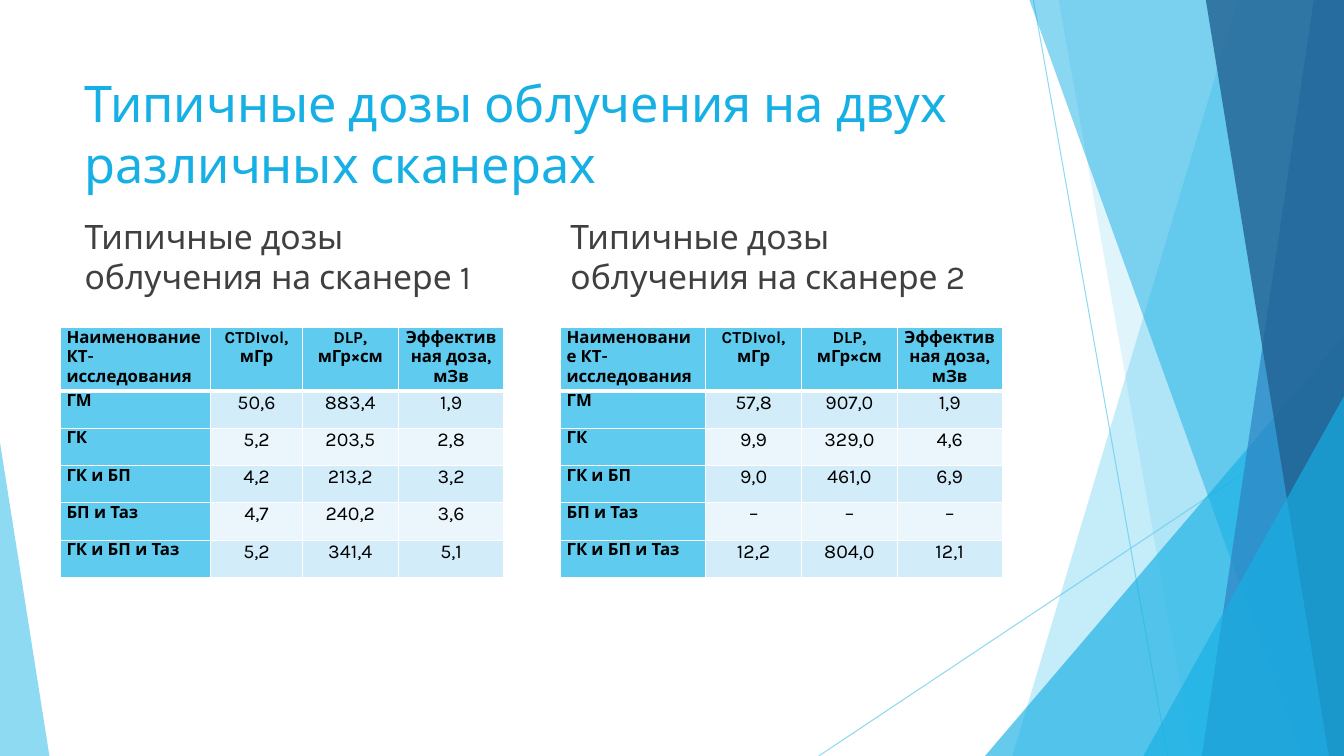
from lxml.etree import SubElement
from pptx import Presentation
from pptx.dml.color import RGBColor
from pptx.enum.shapes import MSO_CONNECTOR, MSO_SHAPE
from pptx.enum.text import MSO_ANCHOR, PP_ALIGN
from pptx.oxml import parse_xml
from pptx.oxml.ns import nsdecls, qn
from pptx.util import Inches, Pt

# Content
TITLE = "Типичные дозы облучения на двух различных сканерах"
HEADER = ["Наименование КТ-исследования", "CTDIvol, мГр", "DLP, мГр×см",
          "Эффективная доза, мЗв"]
STUDIES = ["ГМ", "ГК", "ГК и БП", "БП и Таз", "ГК и БП и Таз"]
SCANNERS = [
    {"heading": "Типичные дозы облучения на сканере 1",
     "heading_left": 0.74, "left": 0.6, "cols": [1.49, 0.91, 0.95, 1.05],
     "doses": [("50,6", "883,4", "1,9"), ("5,2", "203,5", "2,8"),
               ("4,2", "213,2", "3,2"), ("4,7", "240,2", "3,6"),
               ("5,2", "341,4", "5,1")]},
    {"heading": "Типичные дозы облучения на сканере 2",
     "heading_left": 5.56, "left": 5.56, "cols": [1.44, 0.95, 0.95, 1.04],
     "doses": [("57,8", "907,0", "1,9"), ("9,9", "329,0", "4,6"),
               ("9,0", "461,0", "6,9"), ("–", "–", "–"),
               ("12,2", "804,0", "12,1")]},
]

# Style
FONT = "Karla"
SKY = RGBColor(0x5F, 0xCB, 0xEF)
AZURE = RGBColor(0x17, 0xB0, 0xE4)
BLUE = RGBColor(0x2E, 0x83, 0xC3)
NAVY = RGBColor(0x22, 0x62, 0x92)
GRAY = RGBColor(0x40, 0x40, 0x40)
BLACK = RGBColor(0, 0, 0)
BANDS = [RGBColor(0xEA, 0xF6, 0xFC), RGBColor(0xD2, 0xEC, 0xF9)]
W, H = 13.33, 7.5
TABLE_TOP, HEADER_H, ROW_H = 3.25, 0.63, 0.37

# Decoration, back to front: a panel runs from its slanted left side
# (top x, bottom x) to the right edge; a wedge is a right triangle on the
# bottom edge (left, top, width, apex position).
LINES = [((10.25, 0), (11.58, H)), ((W, 4.03), (8.12, H))]
FACETS = [
    ("panel", (12.28, 10.04), SKY, 36),
    ("panel", (10.5, 11.83), SKY, 20),
    ("wedge", (9.77, 3.33, 3.56, 1), AZURE, 66),
    ("panel", (10.21, 12.91), AZURE, 50),
    ("panel", (13.03, 11.92), BLUE, 70),
    ("panel", (11.96, 13.18), NAVY, 80),
    ("wedge", (11.34, 3.93, 1.99, 1), AZURE, 66),
    ("wedge", (0, 4.39, 0.49, 0), SKY, 70),
]


def set_alpha(element, percent):
    color = next(element.iter(qn("a:srgbClr")))
    SubElement(color, qn("a:alpha"), val=str(percent * 1000))


def add_line(shapes, start, end):
    sp = shapes.add_connector(MSO_CONNECTOR.STRAIGHT,
                              *map(Inches, start + end))
    sp.line.color.rgb = SKY
    sp.line.width = Pt(0.75)
    props = sp._element.spPr
    set_alpha(props, 70)
    SubElement(props, qn("a:effectLst"))


def add_facet(shapes, kind, geometry, color, opacity):
    if kind == "panel":
        top_x, bottom_x = geometry
        corners = [(W, 0), (W, H), (bottom_x, H)]
        builder = shapes.build_freeform(Inches(top_x), 0)
        builder.add_line_segments([(Inches(x), Inches(y)) for x, y in corners])
        sp = builder.convert_to_shape()
    else:
        left, top, width, apex = geometry
        sp = shapes.add_shape(MSO_SHAPE.ISOSCELES_TRIANGLE,
                              *map(Inches, (left, top, width, H - top)))
        sp.adjustments[0] = apex
    sp.shadow.inherit = False
    sp.fill.solid()
    sp.fill.fore_color.rgb = color
    set_alpha(sp._element.spPr, opacity)
    sp.line.fill.background()


def write(p, text, size, color, bold=False):
    p.text = text
    p.font.name, p.font.size, p.font.bold = FONT, Pt(size), bold
    p.font.color.rgb = color


def add_text(shapes, box, text, size, color, anchor, space_before=0):
    tf = shapes.add_textbox(*map(Inches, box)).text_frame
    tf.word_wrap = True
    tf.vertical_anchor = anchor
    tf.paragraphs[0].space_before = Pt(space_before)
    write(tf.paragraphs[0], text, size, color)


def add_borders(cell, row):
    """White rules, with a thick one under the header row."""
    widths = {"L": 1, "R": 1, "T": 3 if row == 1 else 1,
              "B": 3 if row == 0 else 1}
    for i, (side, width) in enumerate(widths.items()):
        cell._tc.get_or_add_tcPr().insert(i, parse_xml(
            f'<a:ln{side} {nsdecls("a")} w="{Pt(width)}"><a:solidFill>'
            f'<a:srgbClr val="FFFFFF"/></a:solidFill></a:ln{side}>'))


def add_dose_table(shapes, scanner):
    rows = [HEADER] + [[study, *doses] for study, doses
                       in zip(STUDIES, scanner["doses"])]
    heights = [HEADER_H] + [ROW_H] * len(STUDIES)
    cols = scanner["cols"]
    table = shapes.add_table(
        len(rows), len(cols),
        *map(Inches, (scanner["left"], TABLE_TOP, sum(cols), sum(heights)))).table
    for column, width in zip(table.columns, cols):
        column.width = Inches(width)
    for r, (values, height) in enumerate(zip(rows, heights)):
        table.rows[r].height = Inches(height)
        for c, value in enumerate(values):
            cell = table.cell(r, c)
            is_label = r == 0 or c == 0
            cell.margin_left = cell.margin_right = Inches(0.06)
            cell.margin_top = cell.margin_bottom = 0
            cell.fill.solid()
            cell.fill.fore_color.rgb = SKY if is_label else BANDS[r % 2]
            add_borders(cell, r)
            p = cell.text_frame.paragraphs[0]
            p.alignment = PP_ALIGN.CENTER if c else PP_ALIGN.LEFT
            write(p, value, 12 if is_label else 14, BLACK, is_label)


def main():
    prs = Presentation()
    prs.slide_width, prs.slide_height = Inches(W), Inches(H)
    shapes = prs.slides.add_slide(prs.slide_layouts[6]).shapes

    # Background facets
    for start, end in LINES:
        add_line(shapes, start, end)
    for facet in FACETS:
        add_facet(shapes, *facet)

    # Title, then a heading and a table per scanner
    add_text(shapes, (0.74, 0.67, 9.4, 1.44), TITLE, 36, AZURE, MSO_ANCHOR.TOP)
    for scanner in SCANNERS:
        add_text(shapes, (scanner["heading_left"], 2.36, 4.58, 0.63),
                 scanner["heading"], 24, GRAY, MSO_ANCHOR.BOTTOM, 10)
        add_dose_table(shapes, scanner)

    prs.save("out.pptx")


if __name__ == "__main__":
    main()
